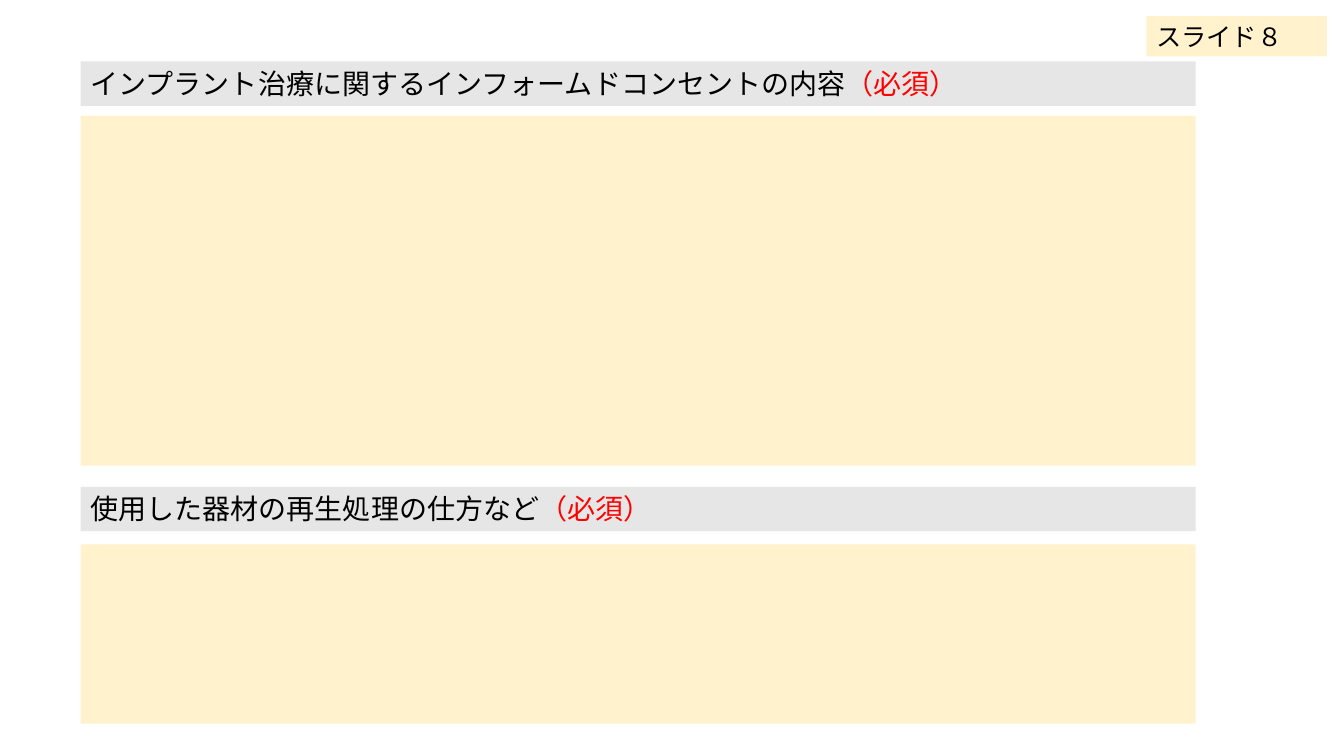
from dataclasses import dataclass

import pptx
import pptx.dml.color
import pptx.enum.shapes
import pptx.enum.text
import pptx.slide
import pptx.util

Inches = pptx.util.Inches
CREAM, GREY, BLACK, RED = "FFF2CC", "E7E6E6", "000000", "FF0000"
LEFT, WIDTH, HEADING_HEIGHT = 0.8, 11.06, 0.44


@dataclass
class Span:
    text: str
    color: str = BLACK


@dataclass
class Section:
    title: str
    heading_top: float
    answer_top: float
    answer_height: float


SECTIONS = [
    Section("インプラント治療に関するインフォームドコンセントの内容", 0.61, 1.15, 3.47),
    Section("使用した器材の再生処理の仕方など", 4.83, 5.4, 1.78),
]


def rgb(value: str) -> pptx.dml.color.RGBColor:
    return pptx.dml.color.RGBColor.from_string(value)


def add_box(page: pptx.slide.Slide, left: float, top: float, width: float,
            height: float, fill: str, spans: tuple[Span, ...] = (),
            size: int = 20) -> None:
    box = page.shapes.add_shape(
        pptx.enum.shapes.MSO_SHAPE.RECTANGLE,
        Inches(left), Inches(top), Inches(width), Inches(height))
    box.shadow.inherit = False
    box.fill.solid()
    box.fill.fore_color.rgb = rgb(fill)
    box.line.fill.background()
    if not spans:
        return
    frame = box.text_frame
    frame.word_wrap = True
    frame.vertical_anchor = pptx.enum.text.MSO_ANCHOR.TOP
    para = frame.paragraphs[0]
    para.alignment = pptx.enum.text.PP_ALIGN.LEFT
    para.font.name = "Calibri"
    para.font.size = pptx.util.Pt(size)
    for span in spans:
        run = para.add_run()
        run.text = span.text
        run.font.color.rgb = rgb(span.color)


def main() -> None:
    deck = pptx.Presentation()
    deck.slide_width, deck.slide_height = Inches(13.33), Inches(7.5)
    page = deck.slides.add_slide(deck.slide_layouts[6])

    # Slide number tag
    add_box(page, 11.37, 0.16, 1.79, 0.4, CREAM, (Span("スライド８"),), 18)

    # Headings, each with its answer area
    for section in SECTIONS:
        add_box(page, LEFT, section.heading_top, WIDTH, HEADING_HEIGHT, GREY,
                (Span(section.title), Span("（必須）", RED)))
        add_box(page, LEFT, section.answer_top, WIDTH, section.answer_height, CREAM)

    deck.save("out.pptx")


if __name__ == "__main__":
    main()
